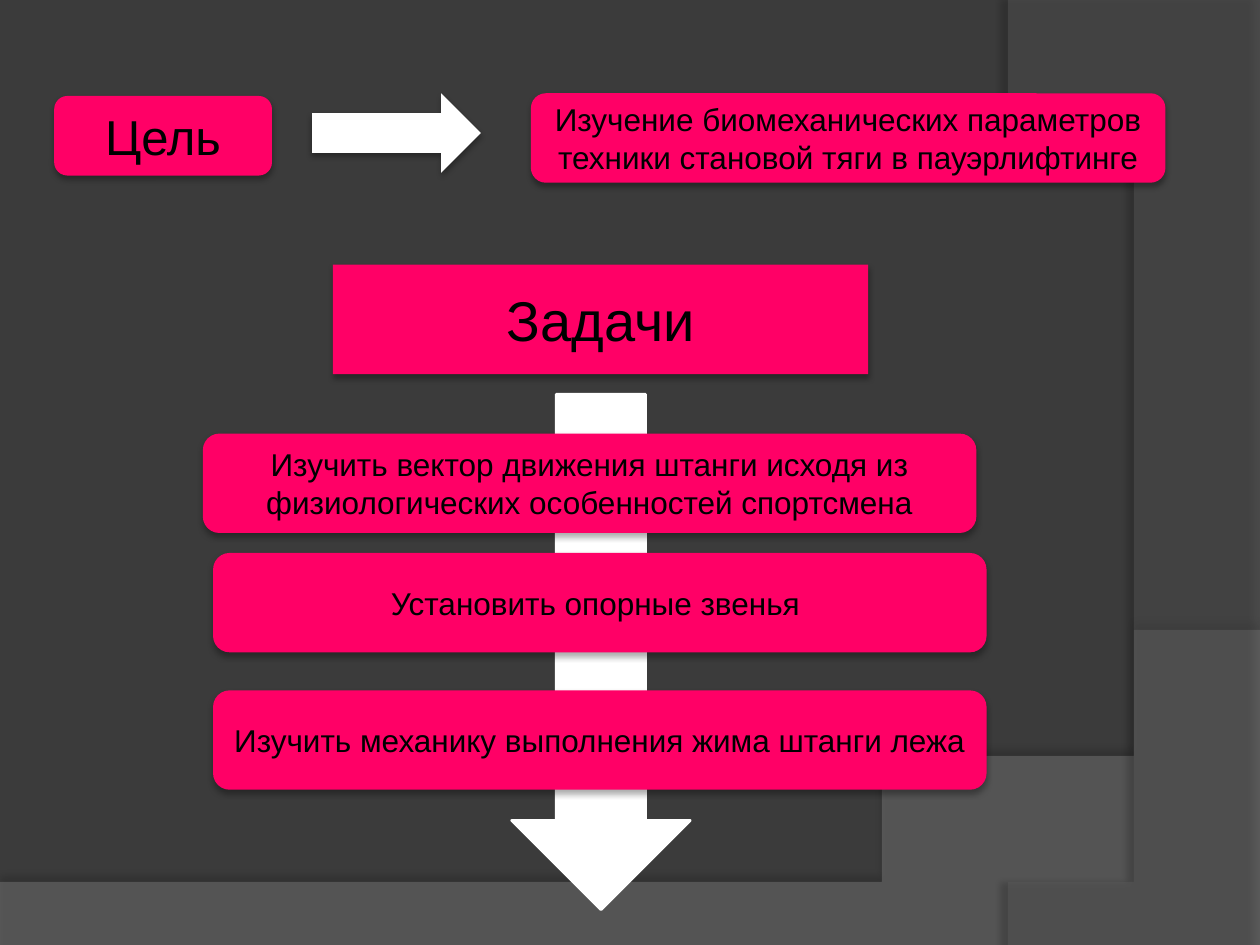
from lxml import etree
from pptx import Presentation, util as u
from pptx.dml.color import RGBColor
from pptx.enum import shapes, text
from pptx.oxml.ns import qn

WIDTH, HEIGHT = 10, 7.5
COLORS = {"ground": "3B3B3B", "wave": "7F7F7F", "side": "5E5E5E",
          "card": "FF0066", "arrow": "FFFFFF", "ink": "000000"}
SHAPE = shapes.MSO_SHAPE
CARD_SHADOW = (32, 3.5, 2.2, 90)  # opacity %, blur pt, distance pt, direction


def rgb(name):
    return RGBColor.from_string(COLORS[name])


def within(box, left, top, width, height):
    """Box in inches from shares of a parent box."""
    x, y, w, h = box
    return x + left * w, y + top * h, width * w, height * h


def paint(shape, color, opacity=100, shadow=None, line=None):
    shape.shadow.inherit = False
    shape.fill.solid()
    shape.fill.fore_color.rgb = rgb(color)
    if line:
        shape.line.color.rgb = rgb(color)
        shape.line.width = u.Pt(line)
    else:
        shape.line.fill.background()
    props = shape.element.spPr
    if opacity < 100:
        solid = props.find(qn("a:solidFill"))
        etree.SubElement(solid[0], qn("a:alpha"), val=str(opacity * 1000))
    if shadow:
        alpha, blur, distance, direction = shadow
        outer = etree.SubElement(
            props.find(qn("a:effectLst")), qn("a:outerShdw"),
            blurRad=str(u.Pt(blur)), dist=str(u.Pt(distance)),
            dir=str(direction * 60000), algn="ctr", rotWithShape="0")
        tint = etree.SubElement(outer, qn("a:srgbClr"), val=COLORS["ink"])
        etree.SubElement(tint, qn("a:alpha"), val=str(alpha * 1000))


def write(shape, wording, size=18, color="ink", font="Arial"):
    frame = shape.text_frame
    frame.word_wrap = True
    frame.auto_size = text.MSO_AUTO_SIZE.NONE
    frame.vertical_anchor = text.MSO_ANCHOR.MIDDLE
    paragraph = frame.paragraphs[0]
    paragraph.alignment = text.PP_ALIGN.CENTER
    run = paragraph.add_run()
    run.text = wording
    run.font.size, run.font.name = u.Pt(size), font
    run.font.color.rgb = rgb(color)


def add_figure(slide, kind, box):
    return slide.shapes.add_shape(kind, *map(u.Inches, box))


def add_card(slide, box, wording, **style):
    card = add_figure(slide, SHAPE.ROUNDED_RECTANGLE, box)
    paint(card, "card", shadow=CARD_SHADOW)
    write(card, wording, **style)


def add_title_card(slide, box, wording, **style):
    title = slide.shapes.title
    title.left, title.top, title.width, title.height = map(u.Inches, box)
    outline = etree.SubElement(title.element.spPr, qn("a:prstGeom"), prst="roundRect")
    etree.SubElement(outline, qn("a:avLst"))
    paint(title, "card", shadow=CARD_SHADOW)
    write(title, wording, **style)


def curve(start, pull_a, pull_b, end, steps=48):
    """Points along a cubic Bezier curve."""
    points = []
    for step in range(steps + 1):
        t = step / steps
        weights = ((1 - t) ** 3, 3 * t * (1 - t) ** 2, 3 * t * t * (1 - t), t ** 3)
        points.append(tuple(sum(w * p[axis] for w, p in
                                zip(weights, (start, pull_a, pull_b, end)))
                            for axis in (0, 1)))
    return points


def add_backdrop(slide, box):
    x, y, w, h = box
    right, bottom = x + w, y + h
    slide.background.fill.solid()
    slide.background.fill.fore_color.rgb = rgb("ground")
    wave = [(x, bottom), (right, bottom)] + curve(
        (right, 5.2), (5.59, 7.29), (3.91, 7.19), (x, 7.05))
    side = [(right, y), (right, bottom)] + curve(
        (8.21, bottom), (9.35, 6.19), (10.18, 3), (8, y))
    for points, color, opacity, shadow in (
            (wave, "wave", 45, (35, 4, 3.5, 270)),
            (side, "side", 40, (45, 4, 4, 180))):
        builder = slide.shapes.build_freeform(*points[0], scale=u.Inches(1))
        builder.add_line_segments(points[1:], close=True)
        paint(builder.convert_to_shape(), color, opacity, shadow)


def add_goal(slide, box):
    add_card(slide, within(box, 0, 0.03, 0.196, 0.89), "Цель", size=28)
    arrow = add_figure(slide, SHAPE.RIGHT_ARROW, within(box, 0.232, 0, 0.152, 0.89))
    paint(arrow, "arrow", shadow=CARD_SHADOW)
    add_card(slide, within(box, 0.429, 0, 0.571, 1),
             "Изучение биомеханических параметров техники становой тяги в пауэрлифтинге")


def add_tasks(slide, box):
    add_title_card(slide, within(box, 0.166, 0, 0.683, 0.17), "Задачи", size=32)
    arrow = add_figure(slide, SHAPE.DOWN_ARROW, within(box, 0.394, 0.201, 0.228, 0.799))
    paint(arrow, "arrow", line=1.5)
    tasks = (
        (0, 0.262, "Изучить вектор движения штанги исходя из "
                   "физиологических особенностей спортсмена"),
        (0.013, 0.447, "Установить опорные звенья "),
        (0.013, 0.66, "Изучить механику выполнения жима штанги лежа"))
    for left, top, task in tasks:
        add_card(slide, within(box, left, top, 0.987, 0.154), task)


def main():
    deck = Presentation()
    deck.slide_width, deck.slide_height = u.Inches(WIDTH), u.Inches(HEIGHT)
    slide = deck.slides.add_slide(deck.slide_layouts[5])  # title only
    add_backdrop(slide, (0, 0, WIDTH, HEIGHT))
    add_goal(slide, (0.43, 0.74, 8.82, 0.71))
    add_tasks(slide, (1.61, 2.1, 6.22, 5.12))
    deck.save("out.pptx")


if __name__ == "__main__":
    main()
